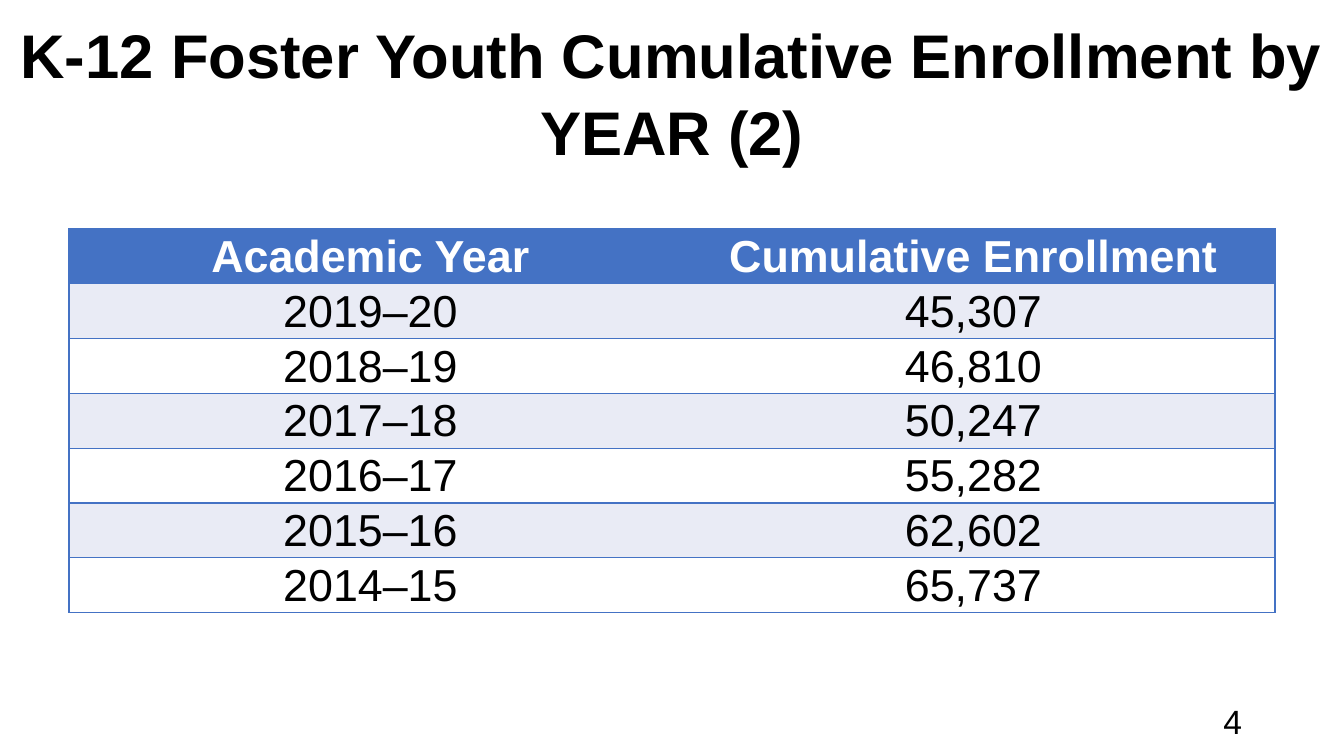
import lxml.etree
import pptx
import pptx.dml.color
import pptx.enum.text
import pptx.oxml.ns
import pptx.util

BLACK = pptx.dml.color.RGBColor(0x00, 0x00, 0x00)
WHITE = pptx.dml.color.RGBColor(0xFF, 0xFF, 0xFF)
BLUE = pptx.dml.color.RGBColor(0x44, 0x72, 0xC4)
LAVENDER = pptx.dml.color.RGBColor(0xE9, 0xEB, 0xF5)
ALIGN = pptx.enum.text.PP_ALIGN
MIDDLE = pptx.enum.text.MSO_ANCHOR.MIDDLE

ENROLLMENT = [
    ("Academic Year", "Cumulative Enrollment"),
    ("2019–20", "45,307"),
    ("2018–19", "46,810"),
    ("2017–18", "50,247"),
    ("2016–17", "55,282"),
    ("2015–16", "62,602"),
    ("2014–15", "65,737"),
]


def px(length):
    """Turn pixels into EMU."""
    return pptx.util.Emu(round(length * 914400 / 100.8))


def write(frame, text, size, color=BLACK, bold=False, align=ALIGN.CENTER):
    """Set and format the single paragraph of a text frame."""
    frame.text = text
    frame.word_wrap = True
    para = frame.paragraphs[0]
    para.alignment = align
    font = para.runs[0].font
    font.name = "Arial"
    font.size = pptx.util.Pt(size)
    font.bold = bold
    font.color.rgb = color


def add_title(slide, text):
    """Place the title across the top of the slide."""
    title = slide.shapes.title
    title.left, title.top, title.width, title.height = px(0), px(0), px(1344), px(181)
    write(title.text_frame, text, 44, bold=True)
    title.text_frame.vertical_anchor = MIDDLE
    title.text_frame.paragraphs[0].line_spacing = 1.05


def add_page_number(slide, text):
    """Add the page number at the bottom right."""
    box = slide.shapes.add_textbox(px(950), px(701), px(302), px(40))
    write(box.text_frame, text, 24, align=ALIGN.RIGHT)
    box.text_frame.vertical_anchor = MIDDLE


def set_borders(cell, visible_sides):
    """Draw the named sides of a cell and hide the others."""
    properties = cell._tc.get_or_add_tcPr()
    for side in "LRTB":
        line = lxml.etree.SubElement(properties, pptx.oxml.ns.qn(f"a:ln{side}"), w="12700")
        if side in visible_sides:
            fill = lxml.etree.SubElement(line, pptx.oxml.ns.qn("a:solidFill"))
            lxml.etree.SubElement(fill, pptx.oxml.ns.qn("a:srgbClr"), val=str(BLUE))
        else:
            lxml.etree.SubElement(line, pptx.oxml.ns.qn("a:noFill"))


def format_cell(cell, text, row, column):
    """Fill one cell according to its row and column."""
    header = row == 0
    write(cell.text_frame, text, 32, WHITE if header else BLACK, header)
    cell.vertical_anchor = MIDDLE
    cell.margin_left = cell.margin_right = cell.margin_top = px(1)
    cell.margin_bottom = 0
    set_borders(cell, "TB" + "LR"[column])
    cell.fill.solid()
    cell.fill.fore_color.rgb = BLUE if header else LAVENDER if row % 2 else WHITE


def add_enrollment_table(slide, records):
    """Add the banded table of enrollment by year."""
    frame = slide.shapes.add_table(
        len(records), 2, px(69), px(229), px(1206), px(51 * len(records)))
    for row, record in enumerate(records):
        for column, text in enumerate(record):
            format_cell(frame.table.cell(row, column), text, row, column)


def main():
    """Build and save the slide."""
    deck = pptx.Presentation()
    deck.slide_width, deck.slide_height = px(1344), px(756)
    slide = deck.slides.add_slide(deck.slide_layouts[5])
    add_title(slide, "K-12 Foster Youth Cumulative Enrollment by YEAR (2)")
    add_page_number(slide, "4")
    add_enrollment_table(slide, ENROLLMENT)
    deck.save("out.pptx")


main()
